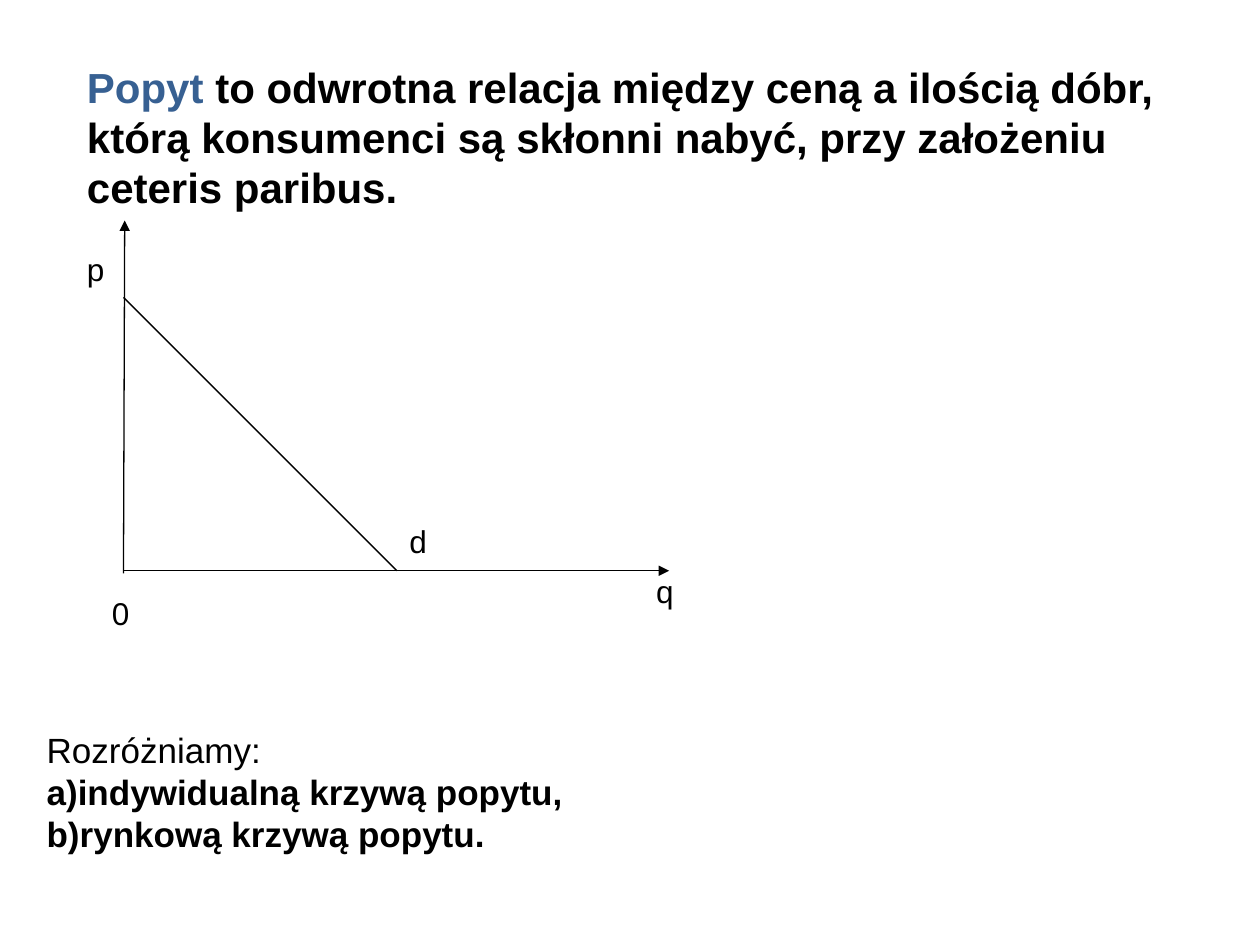
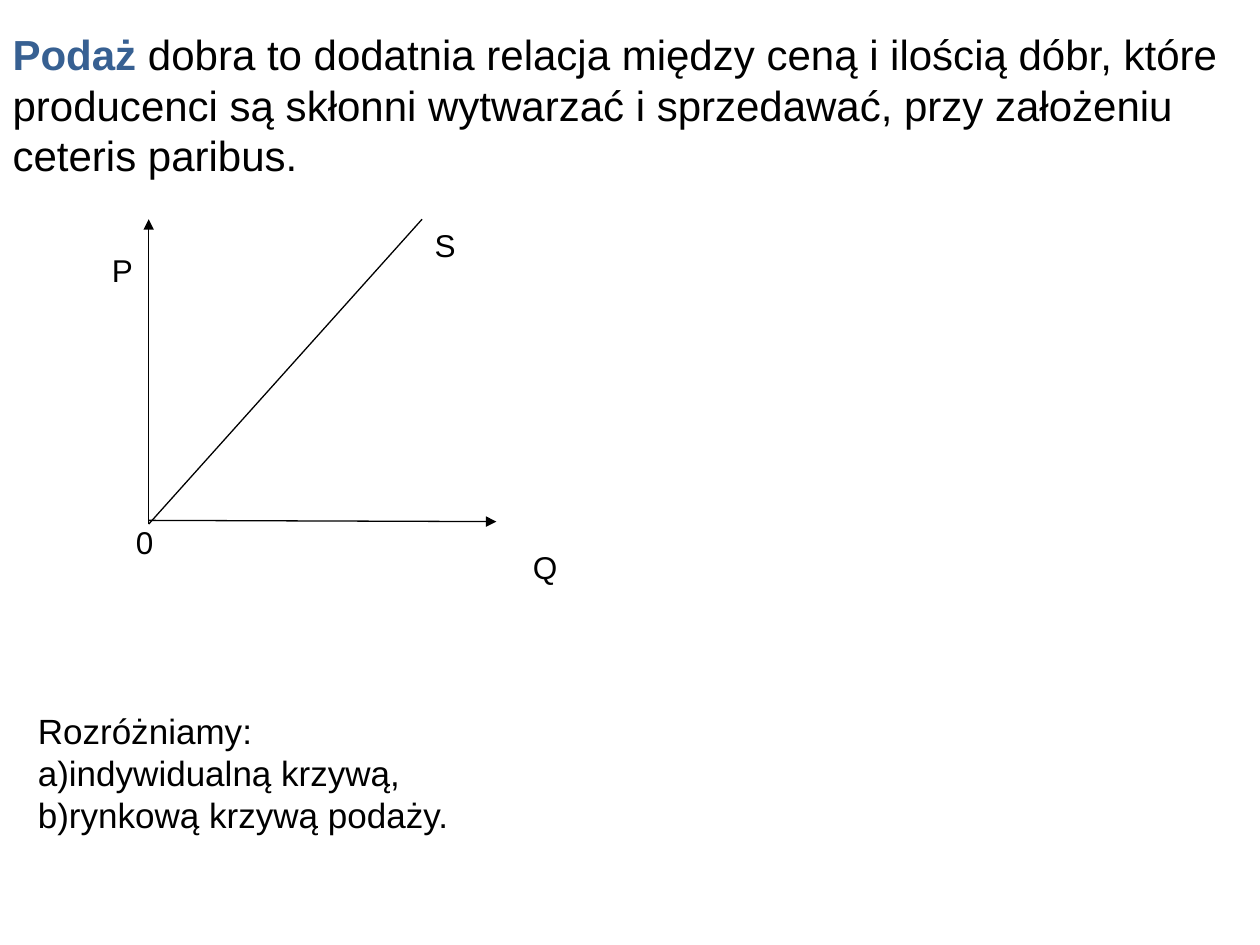
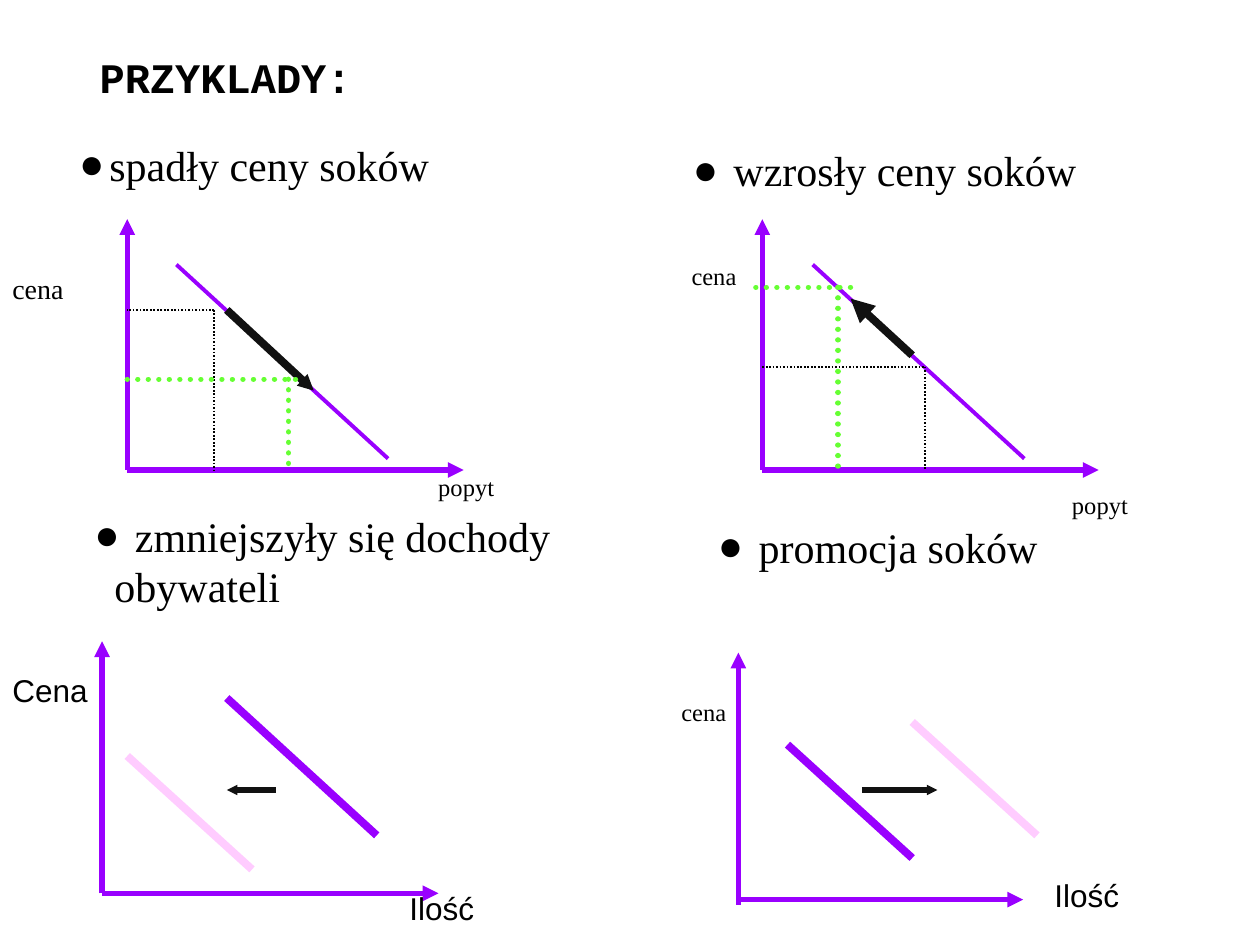
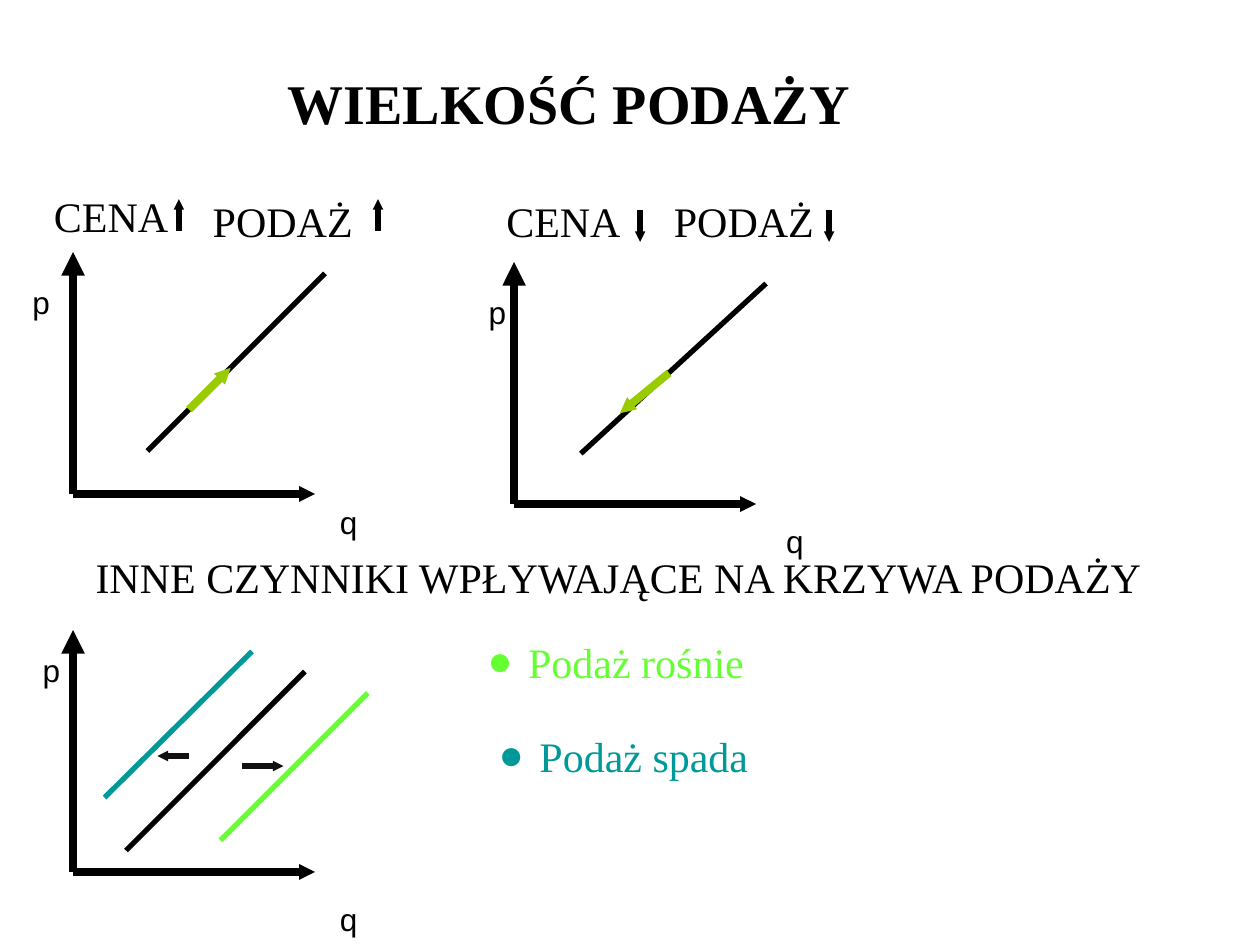
"""Build four slides on demand and supply curves."""
from lxml.etree import SubElement
from pptx import Presentation
from pptx.dml.color import RGBColor
from pptx.enum.dml import MSO_LINE
from pptx.enum.shapes import MSO_CONNECTOR
from pptx.enum.text import MSO_ANCHOR, MSO_AUTO_SIZE, PP_ALIGN
from pptx.oxml.ns import qn
from pptx.util import Inches, Pt

BLACK = RGBColor(0x00, 0x00, 0x00)
INK = RGBColor(0x11, 0x11, 0x11)
BLUE = RGBColor(0x37, 0x60, 0x92)
PURPLE = RGBColor(0x99, 0x00, 0xFF)
PINK = RGBColor(0xFF, 0xCC, 0xFF)
GREEN = RGBColor(0x66, 0xFF, 0x33)
OLIVE = RGBColor(0x99, 0xCC, 0x00)
TEAL = RGBColor(0x00, 0x99, 0x99)

LEAD = {"name": "Arial", "size": Pt(24)}
BODY = {"name": "Arial", "size": Pt(20)}
LABEL = {"name": "Arial", "size": Pt(18)}
CODE = {"name": "Courier New", "size": Pt(24)}
HEAD = {"name": "Times New Roman", "size": Pt(32)}
SERIF = {"name": "Times New Roman", "size": Pt(24)}
NOTE = {"name": "Times New Roman", "size": Pt(16)}
SMALL = {"name": "Times New Roman", "size": Pt(14)}


def write(shape, at, rows, fmt, align=PP_ALIGN.LEFT, wrap=False, anchor=MSO_ANCHOR.TOP, space=1.0):
    """Place a shape and fill it with rows of (mark, runs)."""
    for key, val in zip(("left", "top", "width", "height"), at):
        setattr(shape, key, Inches(val))
    frame = shape.text_frame
    look = {"word_wrap": wrap, "vertical_anchor": anchor, "auto_size": MSO_AUTO_SIZE.NONE}
    for key, val in look.items():
        setattr(frame, key, val)
    for num, (mark, runs) in enumerate(rows):
        para = frame.add_paragraph() if num else frame.paragraphs[0]
        look = {"alignment": align, "line_spacing": space, "space_before": Pt(0)}
        for key, val in look.items():
            setattr(para, key, val)
        for words, color, bold in runs:
            run = para.add_run()
            run.text = words
            for key, val in {**fmt, "bold": bold}.items():
                setattr(run.font, key, val)
            run.font.color.rgb = color
        props = para._p.get_or_add_pPr()
        pad = Inches(0.24) if mark else 0
        props.set("marL", str(pad))
        props.set("indent", str(-pad))
        if not mark:
            SubElement(props, qn("a:buNone"))
            continue
        tint = SubElement(props, qn("a:buClr"))
        SubElement(tint, qn("a:srgbClr"), val=str(runs[0][1]))
        SubElement(props, qn("a:buFont"), typeface=fmt["name"])
        if mark == "a)":
            SubElement(props, qn("a:buAutoNum"), type="alphaLcParenR")
        else:
            SubElement(props, qn("a:buChar"), char=mark)


def draw(slide, ends, color, width, tip=None, dash=None):
    """Draw a line, with an arrowhead of size tip or a dotted stroke."""
    line = slide.shapes.add_connector(MSO_CONNECTOR.STRAIGHT, *map(Inches, ends))
    for key, val in {"width": Pt(width), "dash_style": dash}.items():
        setattr(line.line, key, val)
    line.line.color.rgb = color
    stroke = line.line._get_or_add_ln()
    if dash and width > 1:
        stroke.set("cap", "rnd")
    if tip:
        SubElement(stroke, qn("a:tailEnd"), type="triangle", w=tip, len=tip)
    SubElement(line._element.spPr, qn("a:effectLst"))


deck = Presentation()
deck.slide_width, deck.slide_height = Inches(10), Inches(7.5)
LIST, PLAIN = deck.slide_layouts[1], deck.slide_layouts[5]

curves = [
    {
        "title": (0.59, 0.7, 8.96, 0.77),
        "lead": [
            ("Popyt", BLUE, True),
            (" to odwrotna relacja między ceną a ilością dóbr, którą konsumenci są skłonni nabyć, "
             "przy założeniu ceteris paribus.", BLACK, True),
        ],
        "body": (0.27, 5.06, 9.53, 2.44),
        "items": ["indywidualną krzywą popytu,", "rynkową krzywą popytu."],
        "bold": True,
        "axes": [(0.98, 4.55, 0.99, 1.75), (0.98, 4.53, 5.31, 4.53)],
        "curve": (0.98, 2.36, 3.15, 4.53),
        "space": 0.89,
        "names": [("p", 0.59, 1.97, 0.55), ("q", 5.11, 4.53, 0.35),
                  ("0", 0.79, 4.7, 0.35), ("d", 3.15, 4.13, 0.35)],
    },
    {
        "title": (0, 0.23, 9.8, 1.2),
        "lead": [
            ("Podaż ", BLUE, True),
            ("dobra to dodatnia relacja między ceną i ilością dóbr, które producenci są skłonni "
             "wytwarzać i sprzedawać, przy założeniu ceteris paribus.", BLACK, False),
        ],
        "body": (0.2, 4.91, 9.64, 2.44),
        "items": ["indywidualną krzywą, ", "rynkową krzywą podaży."],
        "bold": False,
        "axes": [(1.18, 4.16, 1.18, 1.74), (1.18, 4.13, 3.94, 4.14)],
        "curve": (1.18, 4.16, 3.35, 1.74),
        "space": 0.93,
        "names": [("Q", 4.13, 4.33, 0.39), ("P", 0.79, 1.97, 0.35),
                  ("0", 0.98, 4.13, 0.35), ("S", 3.35, 1.77, 0.35)],
    },
]
for part in curves:
    slide = deck.slides.add_slide(LIST)
    write(slide.shapes.title, part["title"], [("", part["lead"])], LEAD,
          wrap=True, anchor=MSO_ANCHOR.MIDDLE)
    rows = [("", [("Rozróżniamy: ", BLACK, False)])]
    rows += [("a)", [(item, BLACK, part["bold"])]) for item in part["items"]]
    write(slide.placeholders[1], part["body"], rows, BODY, PP_ALIGN.JUSTIFY, True, MSO_ANCHOR.MIDDLE)
    for ends in part["axes"]:
        draw(slide, ends, BLACK, 0.75, "med")
    draw(slide, part["curve"], BLACK, 0.75)
    for name, left, top, width in part["names"]:
        box = slide.shapes.add_textbox(0, 0, 0, 0)
        write(box, (left, top, width, 0.39), [("", [(name, BLACK, False)])], LABEL,
              space=part["space"])

slide = deck.slides.add_slide(PLAIN)
write(slide.shapes.title, (0.69, 0.36, 2.4, 0.5), [("", [("PRZYKLADY:", BLACK, True)])], CODE,
      wrap=True)

for left, base, top, side, right in [
    (1.01, 3.73, 1.74, 1.01, 3.68),
    (6.05, 3.73, 1.74, 6.05, 8.72),
    (0.81, 7.09, 5.09, 0.81, 3.48),
    (5.86, 7.18, 5.18, 5.87, 8.12),
]:
    level = min(base, 7.14)
    draw(slide, (left, base, left, top), PURPLE, 3, "med")
    draw(slide, (side, level, right, level), PURPLE, 3, "med")

for ends, color, width, tip in [
    ((1.4, 2.1, 3.08, 3.64), PURPLE, 2.25, None),
    ((6.45, 2.1, 8.13, 3.64), PURPLE, 2.25, None),
    ((1.8, 2.46, 2.49, 3.1), INK, 4.5, "sm"),
    ((7.24, 2.82, 6.75, 2.37), INK, 4.5, "med"),
    ((1.8, 5.54, 2.99, 6.63), PURPLE, 4.5, None),
    ((1.01, 6, 2, 6.9), PINK, 4.5, None),
    ((2.19, 6.27, 1.8, 6.27), INK, 3, "sm"),
    ((6.25, 5.91, 7.24, 6.81), PURPLE, 4.5, None),
    ((7.24, 5.73, 8.23, 6.63), PINK, 4.5, None),
    ((6.84, 6.27, 7.44, 6.27), INK, 3, "sm"),
]:
    draw(slide, ends, color, width, tip)

for start, end, drop, level, color, width in [
    (1.7, 1.01, 1.7, 2.46, BLACK, 1),
    (1.01, 2.39, 2.29, 3.01, GREEN, 3),
    (6.05, 7.34, 7.34, 2.91, BLACK, 1),
    (6.75, 5.95, 6.65, 2.28, GREEN, 3),
]:
    draw(slide, (start, level, end, level), color, width, dash=MSO_LINE.ROUND_DOT)
    draw(slide, (drop, level, drop, 3.73), color, width, dash=MSO_LINE.ROUND_DOT)

for at, lines in [
    ((0.53, 1.06, 2.97, 0.5), ["spadły ceny soków"]),
    ((5.4, 1.1, 3.24, 0.5), [" wzrosły ceny soków"]),
    ((0.65, 4, 3.9, 0.9), [" zmniejszyły się dochody", "obywateli"]),
    ((5.6, 4.09, 2.73, 0.5), [" promocja soków"]),
]:
    box = slide.shapes.add_textbox(0, 0, 0, 0)
    rows = [("" if num else "●", [(words, BLACK, False)]) for num, words in enumerate(lines)]
    write(box, at, rows, SERIF)
    for para in box.text_frame.paragraphs[1:]:
        para._p.pPr.set("marL", str(Inches(0.16)))

for name, at, fmt in [
    ("cena", (0, 2.11, 0.6, 0.36), NOTE),
    ("cena", (5.39, 2.02, 0.56, 0.33), SMALL),
    ("cena", (5.31, 5.48, 0.56, 0.33), SMALL),
    ("popyt", (3.38, 3.7, 0.64, 0.33), SMALL),
    ("popyt", (8.41, 3.84, 0.64, 0.33), SMALL),
    ("Cena", (0, 5.28, 0.94, 0.65), LABEL),
    ("Ilość", (3.15, 7.01, 0.91, 0.61), LABEL),
    ("Ilość", (8.27, 6.9, 0.98, 0.64), LABEL),
]:
    box = slide.shapes.add_textbox(0, 0, 0, 0)
    write(box, at, [("", [(name, BLACK, False)])], fmt, wrap=fmt is LABEL)

slide = deck.slides.add_slide(PLAIN)
write(slide.shapes.title, (1.75, 0.49, 5.53, 0.63), [("", [("WIELKOŚĆ PODAŻY", BLACK, True)])],
      HEAD, PP_ALIGN.CENTER, True)

SPAN = 1.92
for left, base in [(0.58, 3.92), (4.08, 4), (0.58, 6.92)]:
    draw(slide, (left, base, left, base - SPAN), BLACK, 4.5, "med")
    draw(slide, (left, base, left + SPAN, base), BLACK, 4.5, "sm")

for left, start, end in [(1.42, 1.83, 1.58), (3, 1.83, 1.58), (5.08, 1.67, 1.92), (6.58, 1.67, 1.92)]:
    draw(slide, (left, start, left, end), BLACK, 3, "sm")

for ends, color, width, tip in [
    ((1.17, 3.58, 2.58, 2.17), BLACK, 3, None),
    ((1.5, 3.25, 1.83, 2.92), OLIVE, 4.5, "sm"),
    ((4.61, 3.6, 6.08, 2.25), BLACK, 3, None),
    ((5.31, 2.96, 4.92, 3.28), OLIVE, 4.5, "sm"),
    ((1, 6.75, 2.42, 5.33), BLACK, 3, None),
    ((1.75, 6.67, 2.92, 5.5), GREEN, 3, None),
    ((0.83, 6.33, 2, 5.17), TEAL, 3, None),
    ((1.92, 6.08, 2.25, 6.08), INK, 3, "sm"),
    ((1.5, 6, 1.25, 6), INK, 3, "sm"),
]:
    draw(slide, ends, color, width, tip)

for words, left, top, width, mark, color in [
    ("CENA", 0.33, 1.46, 1.17, "", BLACK),
    ("PODAŻ", 1.59, 1.5, 1.47, "", BLACK),
    ("CENA", 3.92, 1.5, 1.1, "", BLACK),
    ("PODAŻ", 5.25, 1.5, 1.31, "", BLACK),
    ("INNE CZYNNIKI WPŁYWAJĄCE NA KRZYWA PODAŻY", 0.66, 4.33, 8.48, "", BLACK),
    (" Podaż rośnie", 3.77, 5, 2.23, "●", GREEN),
    (" Podaż spada", 3.86, 5.75, 2.17, "●", TEAL),
]:
    box = slide.shapes.add_textbox(0, 0, 0, 0)
    write(box, (left, top, width, 0.5), [(mark, [(words, color, False)])], SERIF)

for name, left, top in [
    ("p", 0.16, 2.2), ("p", 3.78, 2.28), ("p", 0.24, 5.12),
    ("q", 2.6, 3.94), ("q", 6.14, 4.09), ("q", 2.6, 7.09),
]:
    box = slide.shapes.add_textbox(0, 0, 0, 0)
    write(box, (left, top, 0.34, 0.38), [("", [(name, BLACK, False)])], LABEL, wrap=True)

deck.save("out.pptx")
